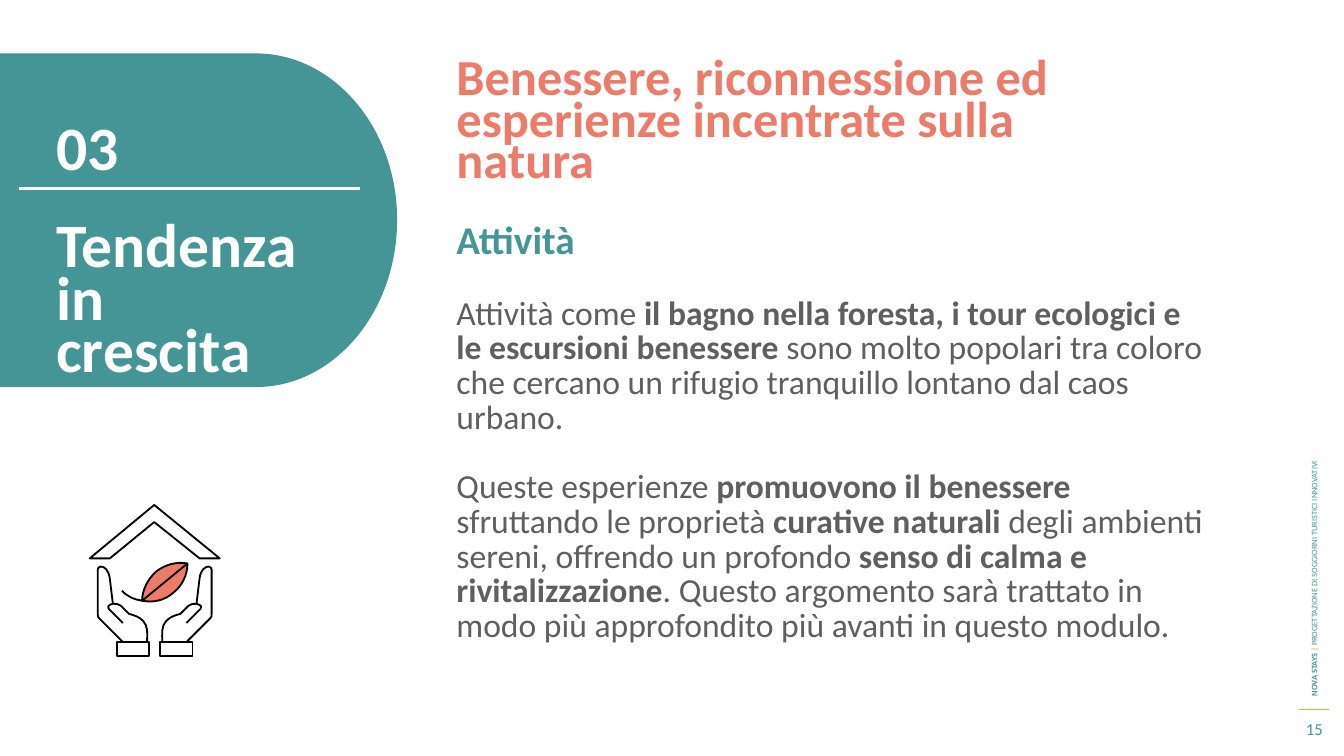
from lxml import etree
from pptx import Presentation
from pptx.dml.color import RGBColor
from pptx.enum.shapes import MSO_CONNECTOR
from pptx.enum.text import MSO_ANCHOR, PP_ALIGN
from pptx.oxml.ns import qn
from pptx.util import Inches, Pt

TEAL = RGBColor(0x45, 0x95, 0x97)
CORAL = RGBColor(0xEC, 0x7C, 0x69)
AMBER = RGBColor(0xFB, 0xA6, 0x3B)
GREY = RGBColor(0x5F, 0x5F, 0x5F)
WHITE = RGBColor(0xFF, 0xFF, 0xFF)
BLACK = RGBColor(0, 0, 0)
STRAIGHT = MSO_CONNECTOR.STRAIGHT
TOP, MIDDLE = MSO_ANCHOR.TOP, MSO_ANCHOR.MIDDLE
LEFT, CENTER = PP_ALIGN.LEFT, PP_ALIGN.CENTER
UNITS = 1000  # freeform units to the inch
AXIS = 1.535  # vertical axis of the house icon


def mirror(path):
    """Flip a path about the axis of the icon."""
    return [tuple(v if i % 2 else 2 * AXIS - v for i, v in enumerate(part))
            for part in path]


def bend(shape, path):
    """Join the three segments of each six-number part into one cubic curve."""
    steps = iter(list(shape._element.iter(qn("a:lnTo"))))
    for part in path[1:]:
        first = next(steps)
        if len(part) == 6:
            first.tag = qn("a:cubicBezTo")
            for step in (next(steps), next(steps)):
                first.append(step[0])
                step.getparent().remove(step)


class Page:
    font = "Calibri"

    def __init__(self, deck):
        self.shapes = deck.slides.add_slide(deck.slide_layouts[6]).shapes

    def line(self, x1, x2, y, color, width):
        rule = self.shapes.add_connector(
            STRAIGHT, Inches(x1), Inches(y), Inches(x2), Inches(y))
        rule.line.color.rgb = color
        rule.line.width = Pt(width)
        etree.SubElement(rule._element.spPr, qn("a:effectLst"))

    def outline(self, path, fill=None, line=BLACK):
        """Draw a path of points (x, y) and cubic curves (six numbers)."""
        nodes = [(round(part[i] * UNITS), round(part[i + 1] * UNITS))
                 for part in path for i in range(0, len(part), 2)]
        pen = self.shapes.build_freeform(*nodes[0], Inches(1) / UNITS)
        pen.add_line_segments(nodes[1:], close=nodes[0] == nodes[-1])
        shape = pen.convert_to_shape()
        bend(shape, path)
        shape.shadow.inherit = False
        if fill is None:
            shape.fill.background()
        else:
            shape.fill.solid()
            shape.fill.fore_color.rgb = fill
        if line is None:
            shape.line.fill.background()
        else:
            shape.line.color.rgb = line
            shape.line.width = Pt(1.3)

    def text(self, box, paras, lead=None, gap=0, anchor=TOP, align=LEFT, turn=0):
        """Each paragraph is a list of runs: (text, size, color, bold)."""
        shape = self.shapes.add_textbox(*map(Inches, box))
        shape.rotation = turn
        frame = shape.text_frame
        frame.word_wrap = True
        frame.vertical_anchor = anchor
        for i, runs in enumerate(paras):
            para = frame.add_paragraph() if i else frame.paragraphs[0]
            para.alignment = align
            if lead:
                para.line_spacing = Pt(lead)
            if i:
                para.space_before = Pt(gap)
            for words, size, color, bold in runs:
                run = para.add_run()
                run.text = words
                run.font.name = self.font
                run.font.size = Pt(size)
                run.font.color.rgb = color
                run.font.bold = bold


def body(*parts):
    """Alternate regular and bold runs, starting with regular."""
    return [(words, 24, GREY, i % 2 == 1) for i, words in enumerate(parts)]


def margin(page):
    page.line(12.89, 13.18, 7.04, AMBER, 0.75)
    page.text((10.15, 4.02, 5.77, 0.2), [[
        ("NOVA STAYS ", 6, TEAL, True),
        ("| ", 6, AMBER, True),
        ("PROGETTAZIONE DI SOGGIORNI TURISTICI INNOVATIVI", 6, TEAL, False),
    ]], anchor=MIDDLE, turn=270)
    page.text((12.78, 7.06, 0.52, 0.34), [[("15", 12, TEAL, False)]],
              anchor=MIDDLE, align=CENTER)


def banner(page):
    page.outline([(0, 0.53), (2.47, 0.53),
                  (2.49, 0.53, 2.52, 0.53, 2.54, 0.53),
                  (3.31, 0.53, 3.94, 1.27, 3.94, 2.18),
                  (3.94, 3.1, 3.31, 3.84, 2.54, 3.84),
                  (2.52, 3.84, 2.49, 3.84, 2.47, 3.84),
                  (0, 3.84), (0, 0.53)], TEAL, None)
    page.line(0.19, 3.57, 1.87, WHITE, 1.75)
    page.text((0.46, 2.21, 2.7, 1.15),
              [[("Tendenza in crescita", 44, WHITE, True)]], lead=37.4)
    page.text((0.46, 1.03, 1.31, 0.42), [[("03", 44, WHITE, True)]])


def story(page):
    page.text((4.43, 0.59, 6.9, 0.88), [[
        ("Benessere, riconnessione ed esperienze incentrate sulla natura",
         36, CORAL, True)]], lead=29.6)
    page.text((4.43, 2.21, 7.69, 4.13), [
        [("Attività", 28, TEAL, True)],
        body("Attività come ",
             "il bagno nella foresta, i tour ecologici e le escursioni benessere ",
             "sono molto popolari tra coloro che cercano un rifugio tranquillo "
             "lontano dal caos urbano."),
        body("Queste esperienze ", "promuovono il benessere ",
             "sfruttando le proprietà", " curative naturali ",
             "degli ambienti sereni, offrendo un profondo ",
             "senso di calma e rivitalizzazione",
             ". Questo argomento sarà trattato in modo più approfondito "
             "più avanti in questo modulo."),
    ], lead=24.8, gap=24.8)


def icon(page):
    stem = [(1.41, 5.96), (1.34, 5.95, 1.26, 5.92, 1.21, 5.86)]
    leaf = [(1.55, 5.67), (1.46, 5.75, 1.41, 5.86, 1.41, 5.96),
            (1.52, 5.98, 1.63, 5.96, 1.72, 5.88),
            (1.81, 5.81, 1.86, 5.7, 1.86, 5.59),
            (1.75, 5.57, 1.64, 5.6, 1.55, 5.67)]
    vein = [(1.41, 5.96), (1.86, 5.59)]
    roof = [(0.89, 5.54), (1.53, 5.01), (2.18, 5.54), (1.98, 5.54),
            (1.53, 5.18), (1.09, 5.54), (0.89, 5.54)]
    hand = [(1.85, 6.37), (2.08, 6.14), (2.1, 6.13, 2.1, 6.11, 2.1, 6.09),
            (2.1, 5.65), (2.1, 5.64, 2.09, 5.62, 2.07, 5.62),
            (2.03, 5.62, 1.99, 5.66, 1.98, 5.74), (1.95, 5.99),
            (1.92, 5.99, 1.89, 5.99, 1.87, 6.01), (1.79, 6.09),
            (1.72, 6.11, 1.69, 6.12, 1.65, 6.16),
            (1.6, 6.21, 1.61, 6.28, 1.61, 6.37)]
    cuff = [(1.59, 6.37), (1.91, 6.37), (1.91, 6.51), (1.59, 6.51), (1.59, 6.37)]
    thumb = [(1.95, 5.99), (1.96, 5.99, 1.97, 5.99, 1.98, 6),
             (1.99, 6.01, 2.01, 6.02, 1.99, 6.04), (1.85, 6.18)]
    page.outline(stem)
    page.outline(leaf, CORAL)
    page.outline(vein)
    page.outline(roof)
    parts = (hand, cuff, thumb)
    for part in parts:
        page.outline(part)
    for part in parts:
        page.outline(mirror(part))


def main():
    deck = Presentation()
    deck.slide_width, deck.slide_height = Inches(40 / 3), Inches(7.5)
    page = Page(deck)
    margin(page)
    banner(page)
    story(page)
    icon(page)
    deck.save("out.pptx")


if __name__ == "__main__":
    main()
